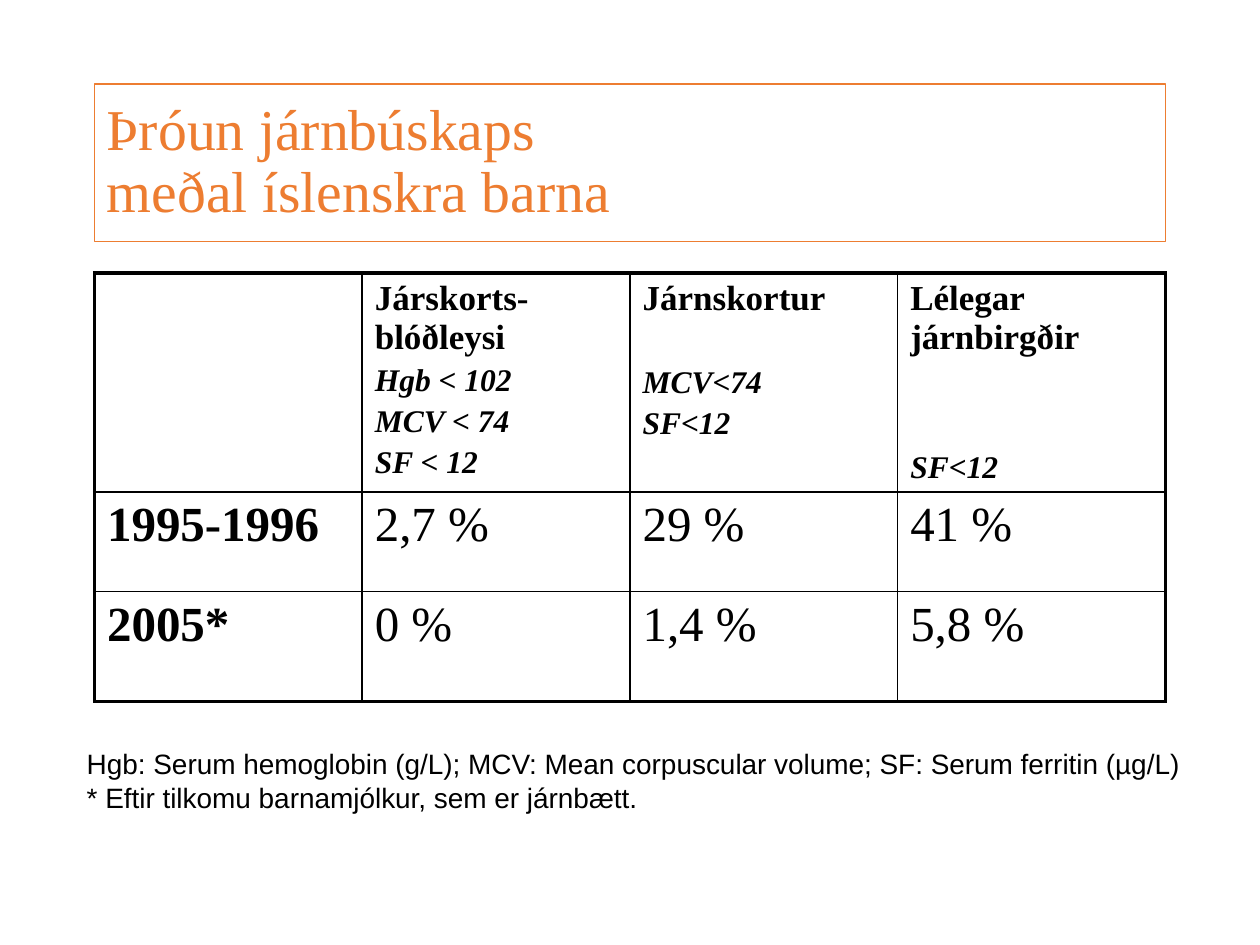
from lxml import etree
from pptx import Presentation
from pptx.dml.color import RGBColor
from pptx.enum.shapes import MSO_SHAPE
from pptx.enum.text import MSO_ANCHOR, PP_ALIGN
from pptx.oxml.ns import qn
from pptx.util import Pt

SERIF = "Times New Roman"


def add_text(paragraph, text, color="000000", **font_values):
    """Add a run and set its font attributes from the keyword values."""
    run = paragraph.add_run()
    run.text = text
    run.font.color.rgb = RGBColor.from_string(color)
    for name, value in font_values.items():
        setattr(run.font, name, value)


def add_border(cell, position, side, width):
    """Insert a black cell border; position keeps the schema order."""
    line = etree.Element(qn(f"a:ln{side}"), w=str(Pt(width)))
    fill = etree.SubElement(line, qn("a:solidFill"))
    etree.SubElement(fill, qn("a:srgbClr"), val="000000")
    cell._tc.get_or_add_tcPr().insert(position, line)


presentation = Presentation()
presentation.slide_width, presentation.slide_height = Pt(720), Pt(540)
slide = presentation.slides.add_slide(presentation.slide_layouts[6])

# Title
title = slide.shapes.add_shape(MSO_SHAPE.RECTANGLE, Pt(54), Pt(48), Pt(612), Pt(90))
title.shadow.inherit = False
title.fill.background()
title.line.color.rgb = RGBColor.from_string("ED7D31")
title.line.width = Pt(0.75)
title.text_frame.vertical_anchor = MSO_ANCHOR.MIDDLE
paragraph = title.text_frame.paragraphs[0]
paragraph.alignment = PP_ALIGN.LEFT
paragraph.line_spacing = 0.9
for index, text in enumerate(["Þróun járnbúskaps ", "meðal íslenskra barna"]):
    if index:
        paragraph.add_line_break()
    add_text(paragraph, text, "ED7D31", name=SERIF, size=Pt(33))

# Table: every cell is a list of (text, space before in points)
heading = {"size": Pt(20), "bold": True}
criterion = {"size": Pt(18), "bold": True, "italic": True}
year = {"size": Pt(28), "bold": True}
percentage = {"size": Pt(28), "bold": False}
rows = [
    [
        [],
        [("Járskorts-blóðleysi", 0), ("Hgb < 102", 3.6), ("MCV < 74", 3.6), ("SF < 12", 3.6)],
        [("Járnskortur", 0), ("MCV<74", 27), ("SF<12", 3.6)],
        [("Lélegar járnbirgðir", 0), ("SF<12", 53.5)],
    ],
    [[(text, 0)] for text in ("1995-1996", "2,7 %", "29 %", "41 %")],
    [[(text, 0)] for text in ("2005*", "0 %", "1,4 %", "5,8 %")],
]
row_heights = [124.5, 57, 63]
last_row, last_column = len(rows) - 1, len(rows[0]) - 1

table = slide.shapes.add_table(
    len(rows), len(rows[0]), Pt(54), Pt(156), Pt(612), Pt(sum(row_heights))
).table
table.first_row = table.horz_banding = False
for column in table.columns:
    column.width = Pt(153)

for row_index, (row, height) in enumerate(zip(rows, row_heights)):
    table.rows[row_index].height = Pt(height)
    for column_index, lines in enumerate(row):
        cell = table.cell(row_index, column_index)
        cell.fill.background()
        outer_sides = {
            "L": column_index == 0,
            "R": column_index == last_column,
            "T": row_index == 0,
            "B": row_index == last_row,
        }
        for position, (side, is_outer) in enumerate(outer_sides.items()):
            add_border(cell, position, side, 2.25 if is_outer else 1)
        for line_index, (text, space) in enumerate(lines):
            frame = cell.text_frame
            paragraph = frame.add_paragraph() if line_index else frame.paragraphs[0]
            paragraph.space_before = Pt(space)
            if row_index == 0:
                style = criterion if line_index else heading
            else:
                style = percentage if column_index else year
            add_text(paragraph, text, name=SERIF, **style)

# Footnotes
footnotes = slide.shapes.add_textbox(Pt(42.5), Pt(423), Pt(642), Pt(46))
footnotes.text_frame.word_wrap = False
notes = [
    "Hgb: Serum hemoglobin (g/L); MCV: Mean corpuscular volume; SF: Serum ferritin (µg/L)",
    "* Eftir tilkomu barnamjólkur, sem er járnbætt.",
]
for index, text in enumerate(notes):
    frame = footnotes.text_frame
    paragraph = frame.add_paragraph() if index else frame.paragraphs[0]
    add_text(paragraph, text, name="Arial", size=Pt(16))

presentation.save("out.pptx")
